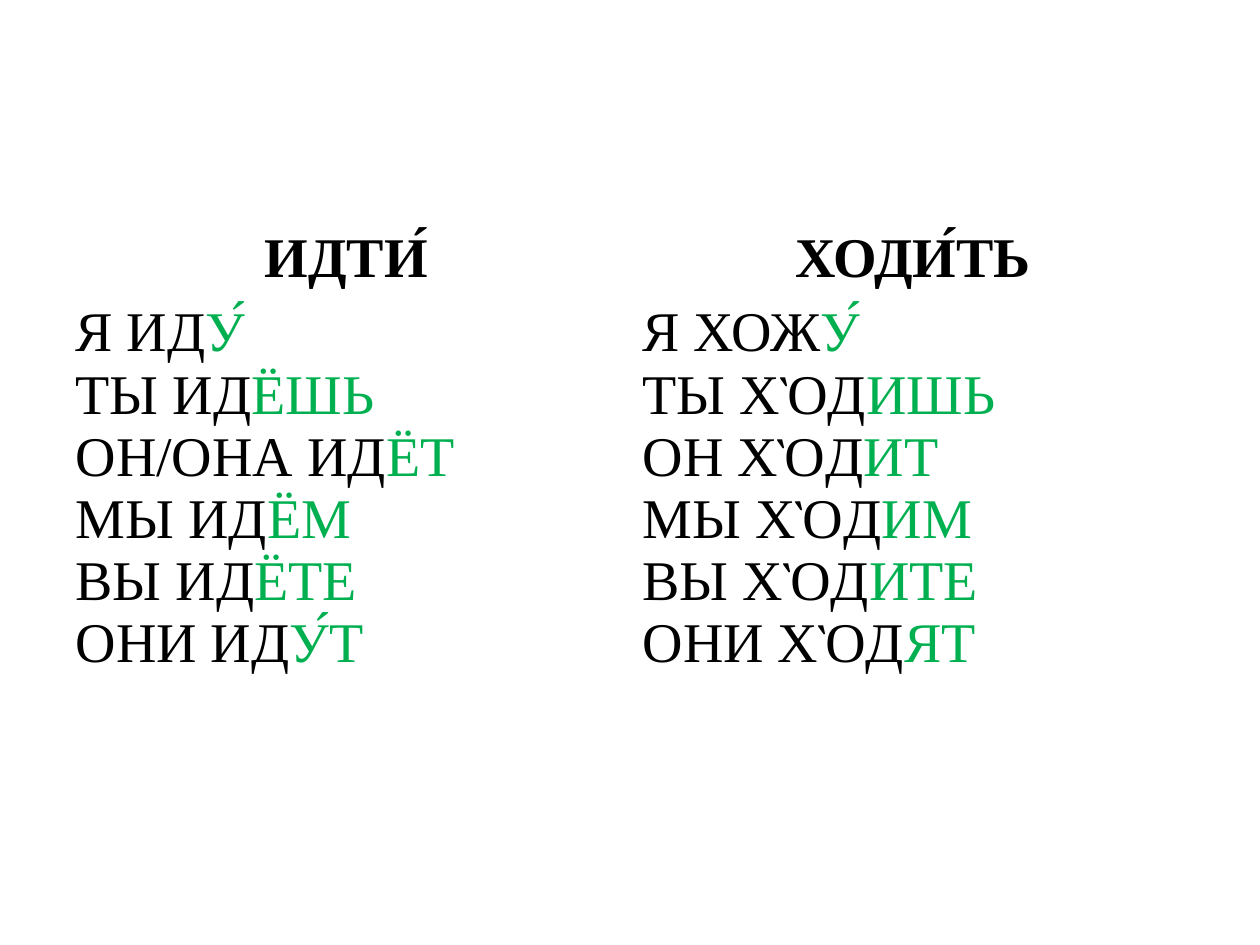
from pptx import Presentation
from pptx.dml.color import RGBColor
from pptx.enum import text
from pptx.util import Cm, Pt

BLACK = RGBColor(0x00, 0x00, 0x00)
GREEN = RGBColor(0x00, 0xB0, 0x50)
FONT = "Times New Roman"

# Each verb maps to its forms, split into stem and ending.
VERBS = {
    "ИДТИ́": [
        ("Я ИД", "У́"),
        ("ТЫ ИД", "ЁШЬ"),
        ("ОН/ОНА ИД", "ЁТ"),
        ("МЫ ИД", "ЁМ"),
        ("ВЫ ИД", "ЁТЕ"),
        ("ОНИ ИД", "У́Т"),
    ],
    "ХОДИ́ТЬ": [
        ("Я ХОЖ", "У́"),
        ("ТЫ ХῸД", "ИШЬ"),
        ("ОН ХῸД", "ИТ"),
        ("МЫ ХῸД", "ИМ"),
        ("ВЫ ХῸД", "ИТЕ"),
        ("ОНИ ХῸД", "ЯТ"),
    ],
}


def add_run(p, wording, color=BLACK, bold=False):
    r = p.add_run()
    r.text = wording
    r.font.name = FONT
    r.font.size = Pt(32)
    r.font.bold = bold
    r.font.color.rgb = color


def fill_heading(cell, verb):
    p = cell.text_frame.paragraphs[0]
    p.alignment = text.PP_ALIGN.CENTER
    add_run(p, verb, bold=True)


def fill_forms(cell, forms):
    """Write one paragraph per form, with the ending in green."""
    tf = cell.text_frame
    for i, (stem, ending) in enumerate(forms):
        p = tf.add_paragraph() if i else tf.paragraphs[0]
        add_run(p, stem)
        add_run(p, ending, GREEN)


def add_conjugation_table(slide, left, top, width, row_height):
    frame = slide.shapes.add_table(2, len(VERBS), left, top, width, 2 * row_height)
    table = frame.table
    table.first_row = False
    table.horz_banding = False
    for cell in table.iter_cells():
        cell.fill.background()
    for col, (verb, forms) in enumerate(VERBS.items()):
        fill_heading(table.cell(0, col), verb)
        fill_forms(table.cell(1, col), forms)


def main():
    prs = Presentation()
    prs.slide_width, prs.slide_height = Cm(25.4), Cm(19.05)
    slide = prs.slides.add_slide(prs.slide_layouts[6])
    add_conjugation_table(slide, Cm(1.27), Cm(4.45), Cm(22.86), Cm(1.04))
    prs.save("out.pptx")


if __name__ == "__main__":
    main()
